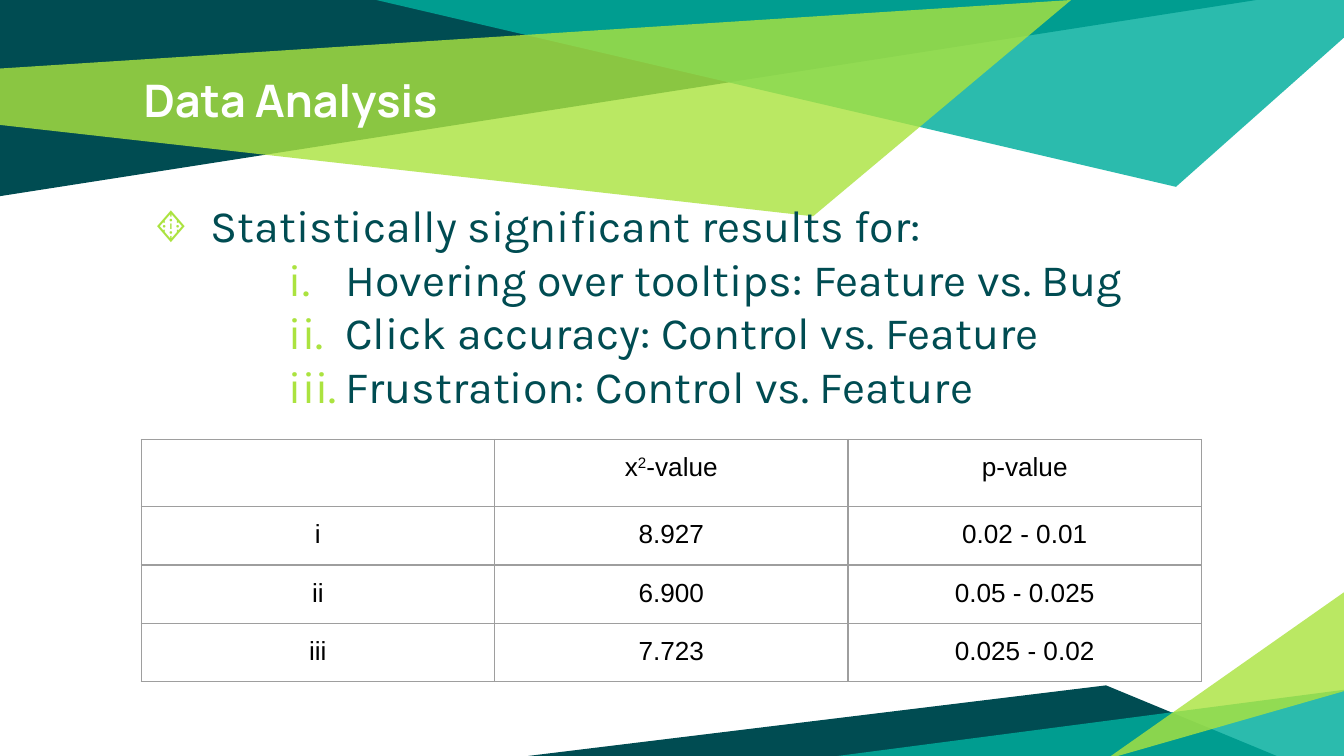
from dataclasses import dataclass

from lxml.etree import SubElement
from pptx import Presentation
from pptx.dml.color import RGBColor
from pptx.enum.text import MSO_ANCHOR as Anchor, PP_ALIGN as Align
from pptx.oxml.ns import qn
from pptx.util import Emu, Inches, Pt

COLUMNS, ROWS = 100, 56.25
CELL = Inches(0.1)
INSET = Inches(0.1)

NAVY = RGBColor(0x00, 0x4C, 0x52)
TEAL = RGBColor(0x00, 0xAE, 0x9D)
LIME = RGBColor(0xAB, 0xE3, 0x3F)
WHITE = RGBColor(0xFF, 0xFF, 0xFF)
BLACK = RGBColor(0x00, 0x00, 0x00)
GREY = RGBColor(0x9E, 0x9E, 0x9E)


@dataclass(frozen=True)
class Facet:
    points: tuple
    color: RGBColor
    opacity: int = 100


@dataclass(frozen=True)
class Style:
    font: str
    size: int
    color: RGBColor
    bold: bool = False


@dataclass(frozen=True)
class Item:
    text: str
    margin: float
    bullet: tuple
    level: int = 0


TITLE = Style("Manrope", 24, WHITE, True)
BODY = Style("Karla", 24, NAVY)
FIGURE = Style("Arial", 14, BLACK)

FACETS = (
    Facet(((0, 0), (0, 14.6), (93.5, 0)), NAVY),
    Facet(((28, 0), (87.5, 13.9), (100, 2.8), (100, 0)), TEAL, 83),
    Facet(((0, 5.1), (0, 9.3), (60.5, 16.1), (79.7, 0)), LIME, 81),
    Facet(((39.3, ROWS), (95, ROWS), (82.3, 51)), NAVY),
    Facet(((100.2, 51.3), (100.2, 56.5), (60.4, 56.5)), TEAL, 83),
    Facet(((100.1, 51.4), (100.1, 44), (82.3, 56.5)), LIME, 81),
)

DIAMOND = ("a:buChar", "char", "🔸")
ROMAN = ("a:buAutoNum", "type", "romanLcPeriod")
ITEMS = (
    Item("Statistically significant results for:", 5, DIAMOND),
    Item("Hovering over tooltips: Feature vs. Bug", 15, ROMAN, 2),
    Item("Click accuracy: Control vs. Feature", 15, ROMAN, 2),
    Item("Frustration: Control vs. Feature", 15, ROMAN, 2),
)

RESULTS = (
    ((), ("x", "2", "-value"), ("p-value",)),
    (("i",), ("8.927",), ("0.02 - 0.01",)),
    (("ii",), ("6.900",), ("0.05 - 0.025",)),
    (("iii",), ("7.723",), ("0.025 - 0.02",)),
)


def cells(count: float) -> Emu:
    """Turn a number of grid cells into a length."""
    return Emu(round(count * CELL))


def draw_facet(page, facet: Facet) -> None:
    """Draw one translucent polygon."""
    start, *others = [(cells(x), cells(y)) for x, y in facet.points]
    builder = page.shapes.build_freeform(*start)
    builder.add_line_segments(others, close=True)
    shape = builder.convert_to_shape()
    shape.shadow.inherit = False
    shape.line.fill.background()
    shape.fill.solid()
    shape.fill.fore_color.rgb = facet.color
    if facet.opacity < 100:
        color = shape.fill._xPr.find(qn("a:solidFill"))[0]
        SubElement(color, qn("a:alpha"), val=str(facet.opacity * 1000))


def add_span(para, text: str, style: Style):
    """Add a styled run and return it."""
    span = para.add_run()
    span.text = text
    span.font.name = style.font
    span.font.size = Pt(style.size)
    span.font.bold = style.bold
    span.font.color.rgb = style.color
    return span


def add_box(page, left: float, top: float, width: float, height: float):
    """Add a wrapping text box and return its frame."""
    box = page.shapes.add_textbox(*map(cells, (left, top, width, height)))
    frame = box.text_frame
    frame.word_wrap = True
    frame.vertical_anchor = Anchor.TOP
    frame.margin_left = frame.margin_right = INSET
    frame.margin_top = frame.margin_bottom = INSET
    return frame


def set_bullet(para, item: Item) -> None:
    """Give a paragraph its hanging indent and marker."""
    para.level = item.level
    properties = para._p.get_or_add_pPr()
    properties.set("marL", str(cells(item.margin)))
    properties.set("indent", str(-cells(4.2)))
    color = SubElement(properties, qn("a:buClr"))
    SubElement(color, qn("a:srgbClr"), val=str(LIME))
    SubElement(properties, qn("a:buFont"), typeface=BODY.font)
    tag, key, value = item.bullet
    SubElement(properties, qn(tag), {key: value})


def draw_items(page, items: tuple) -> None:
    """Write the bulleted findings."""
    frame = add_box(page, 9.7, 13.7, 86.7, 38.2)
    for index, item in enumerate(items):
        para = frame.add_paragraph() if index else frame.paragraphs[0]
        set_bullet(para, item)
        add_span(para, item.text, BODY)


def set_borders(cell) -> None:
    """Outline a table cell on all four sides."""
    properties = cell._tc.get_or_add_tcPr()
    for side in "LRTB":
        line = SubElement(properties, qn(f"a:ln{side}"), w=str(Pt(0.75)))
        fill = SubElement(line, qn("a:solidFill"))
        SubElement(fill, qn("a:srgbClr"), val=str(GREY))


def fill_cell(cell, texts: tuple) -> None:
    """Write a centred cell, raising the second run."""
    set_borders(cell)
    cell.fill.background()
    cell.margin_left = cell.margin_right = INSET
    cell.margin_top = cell.margin_bottom = INSET
    para = cell.text_frame.paragraphs[0]
    para.alignment = Align.CENTER
    for index, text in enumerate(texts):
        span = add_span(para, text, FIGURE)
        if index == 1:
            span.font._element.set("baseline", "30000")


def draw_results(page, results: tuple) -> None:
    """Draw the table of test results."""
    area = map(cells, (10.5, 32.7, 78.9, 17.4))
    table = page.shapes.add_table(len(results), len(results[0]), *area).table
    table.first_row = table.horz_banding = False
    for column in table.columns:
        column.width = cells(26.3)
    for index, texts in enumerate(results):
        table.rows[index].height = cells(4.2 if index else 4.8)
        for cell, parts in zip(table.rows[index].cells, texts):
            fill_cell(cell, parts)


def main() -> None:
    """Build the slide and save the deck."""
    deck = Presentation()
    deck.slide_width, deck.slide_height = cells(COLUMNS), cells(ROWS)
    page = deck.slides.add_slide(deck.slide_layouts[6])
    for facet in FACETS:
        draw_facet(page, facet)
    title = add_box(page, 9.7, 4.4, 80.6, 9.4)
    add_span(title.paragraphs[0], "Data Analysis", TITLE)
    draw_items(page, ITEMS)
    draw_results(page, RESULTS)
    deck.save("out.pptx")


if __name__ == "__main__":
    main()
